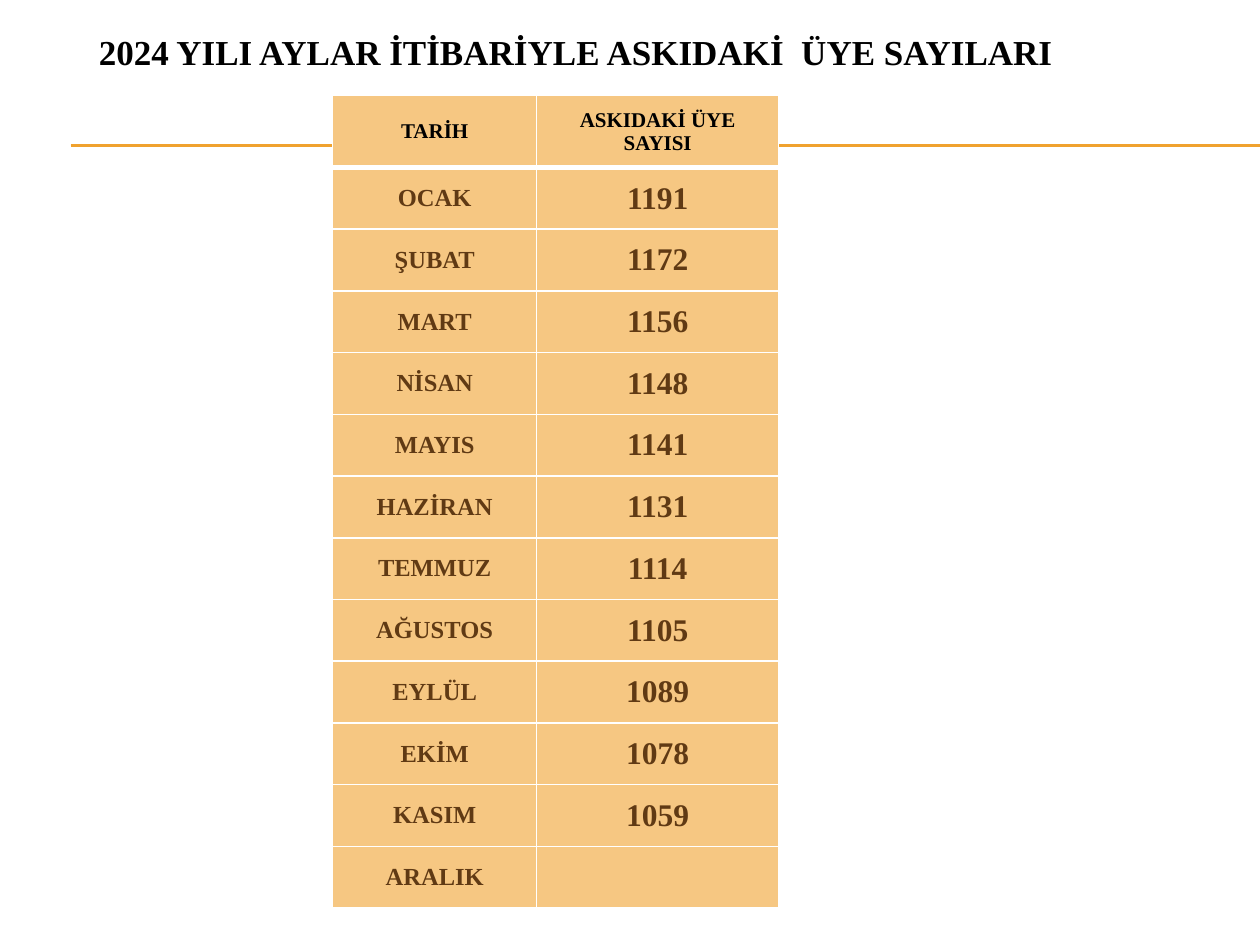
from lxml import etree
from pptx import Presentation
from pptx import util as u
from pptx.dml.color import RGBColor
from pptx.enum import shapes, text
from pptx.oxml import ns

COLORS = {
    "black": "000000",
    "brown": "603A14",
    "cell": "F6C782",
    "border": "FFFFFF",
    "rule": "F0A22E",
}
FONT = "Times New Roman"
HEADERS = ["TARİH", "ASKIDAKİ ÜYE SAYISI"]
MEMBERS = [
    ("OCAK", "1191"),
    ("ŞUBAT", "1172"),
    ("MART", "1156"),
    ("NİSAN", "1148"),
    ("MAYIS", "1141"),
    ("HAZİRAN", "1131"),
    ("TEMMUZ", "1114"),
    ("AĞUSTOS", "1105"),
    ("EYLÜL", "1089"),
    ("EKİM", "1078"),
    ("KASIM", "1059"),
    ("ARALIK", ""),
]
COLUMN_WIDTHS = [1.62, 1.92]
HEADER_HEIGHT = 0.57
ROW_HEIGHT = 0.49


def color(name):
    return RGBColor.from_string(COLORS[name])


def write_text(frame, content, size, fill="black"):
    frame.word_wrap = True
    paragraph = frame.paragraphs[0]
    paragraph.alignment = text.PP_ALIGN.CENTER
    if not content:
        return
    run = paragraph.add_run()
    run.text = content
    run.font.name = FONT
    run.font.size = u.Pt(size)
    run.font.bold = True
    run.font.color.rgb = color(fill)


def add_rule(slide, top):
    line = slide.shapes.add_connector(
        shapes.MSO_CONNECTOR.STRAIGHT,
        u.Inches(0.56), u.Inches(top), u.Inches(10), u.Inches(top),
    )
    line.line.color.rgb = color("rule")
    line.line.width = u.Pt(0.75)
    etree.SubElement(line.element.spPr, ns.qn("a:effectLst"))


def set_borders(cell, **widths):
    properties = cell._tc.get_or_add_tcPr()
    for side in "LRTB":
        width = u.Pt(widths.get(side, 1))
        border = etree.SubElement(properties, ns.qn(f"a:ln{side}"), w=str(width))
        fill = etree.SubElement(border, ns.qn("a:solidFill"))
        etree.SubElement(fill, ns.qn("a:srgbClr"), val=COLORS["border"])


def fill_cell(cell, content, size, fill, **borders):
    set_borders(cell, **borders)
    cell.fill.solid()
    cell.fill.fore_color.rgb = color("cell")
    cell.vertical_anchor = text.MSO_ANCHOR.MIDDLE
    write_text(cell.text_frame, content, size, fill)


def add_member_table(slide):
    height = HEADER_HEIGHT + ROW_HEIGHT * len(MEMBERS)
    table = slide.shapes.add_table(
        len(MEMBERS) + 1, len(HEADERS),
        u.Inches(2.64), u.Inches(0.76),
        u.Inches(sum(COLUMN_WIDTHS)), u.Inches(height),
    ).table
    for column, width in zip(table.columns, COLUMN_WIDTHS):
        column.width = u.Inches(width)
    for index, row in enumerate(table.rows):
        row.height = u.Inches(ROW_HEIGHT if index else HEADER_HEIGHT)
    for column, header in enumerate(HEADERS):
        fill_cell(table.cell(0, column), header, 12, "black", B=3)
    for index, (month, count) in enumerate(MEMBERS, start=1):
        top_border = 3 if index == 1 else 1
        fill_cell(table.cell(index, 0), month, 14, "brown", T=top_border)
        fill_cell(table.cell(index, 1), count, 18, "brown", T=top_border)


def add_title(slide, content):
    box = slide.shapes.add_textbox(
        u.Inches(0.28), u.Inches(0.05), u.Inches(8.58), u.Inches(0.71)
    )
    box.text_frame.vertical_anchor = text.MSO_ANCHOR.MIDDLE
    write_text(box.text_frame, content, 20)


def main():
    presentation = Presentation()
    presentation.slide_width = u.Inches(10)
    presentation.slide_height = u.Inches(7.5)
    slide = presentation.slides.add_slide(presentation.slide_layouts[6])
    for top in (1.15, 1.16):
        add_rule(slide, top)
    add_member_table(slide)
    add_title(slide, "2024 YILI AYLAR İTİBARİYLE ASKIDAKİ  ÜYE SAYILARI")
    presentation.save("out.pptx")


if __name__ == "__main__":
    main()
